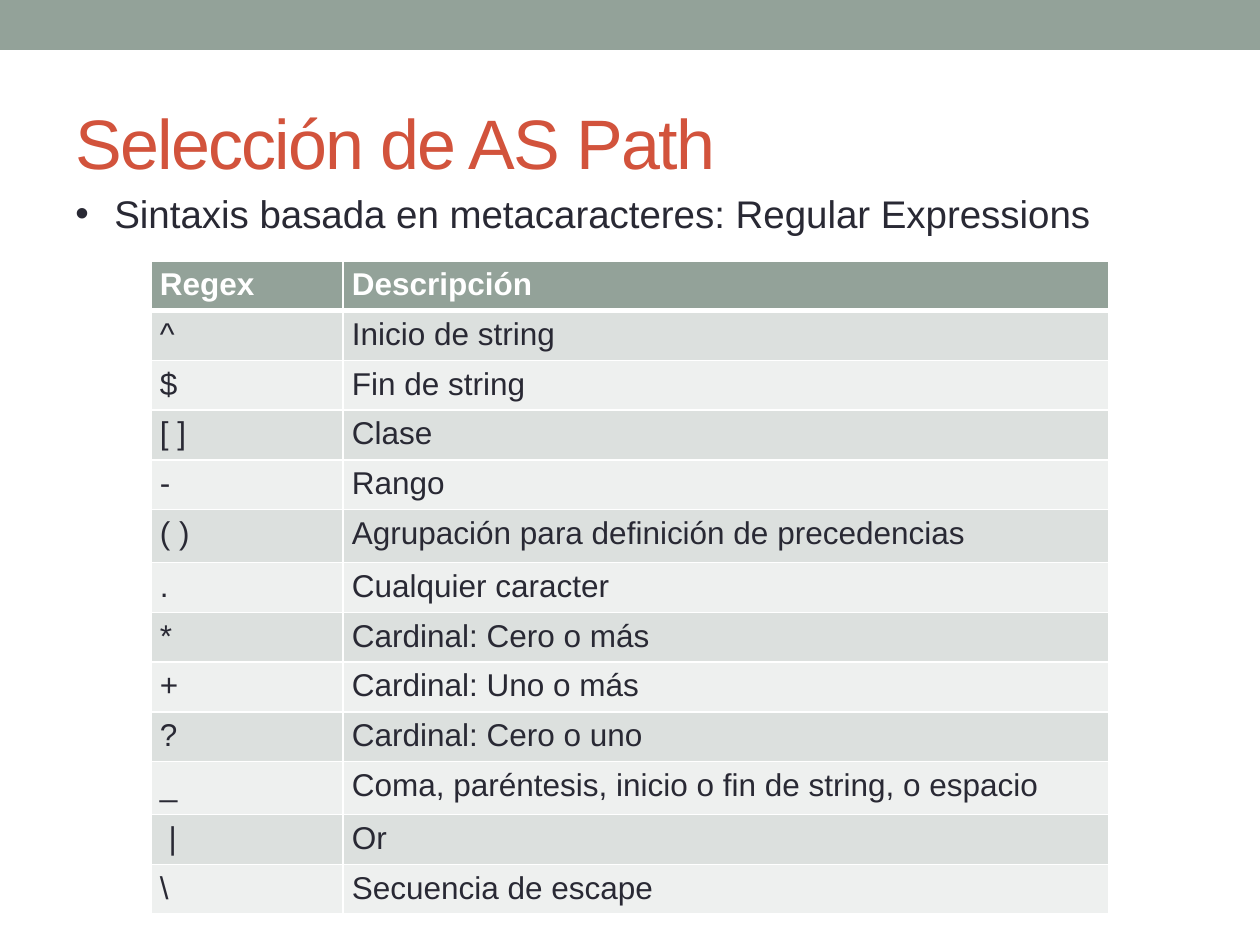
from lxml import etree
from pptx import Presentation
from pptx import util as u
from pptx.dml.color import RGBColor
from pptx.enum import shapes, text
from pptx.oxml.ns import qn

PX = u.Inches(1) // 126
FONT = "Arial"
SAGE, RUST, INK, WHITE = "93A299", "D2533C", "292934", "FFFFFF"
BANDS = ("DCE0DE", "EEF0EF")
COLUMNS = (192, 766)
ROW, TALL_ROW = 42, 53
TALL_ROWS = ("( )", "_")
REGEX_ROWS = (
    ("Regex", "Descripción"),
    ("^", "Inicio de string"),
    ("$", "Fin de string"),
    ("[ ]", "Clase"),
    ("-", "Rango"),
    ("( )", "Agrupación para definición de precedencias"),
    (".", "Cualquier caracter"),
    ("*", "Cardinal: Cero o más"),
    ("+", "Cardinal: Uno o más"),
    ("?", "Cardinal: Cero o uno"),
    ("_", "Coma, paréntesis, inicio o fin de string, o espacio"),
    (" |", "Or"),
    ("\\", "Secuencia de escape"),
)


def px(n):
    return u.Emu(n * PX)


def color(value):
    return RGBColor.from_string(value)


def fill(target, value):
    target.fill.solid()
    target.fill.fore_color.rgb = color(value)


def format_run(p, size, value, bold=False):
    r = p.runs[0]
    r.font.name, r.font.size, r.font.bold = FONT, u.Pt(size), bold
    r.font.color.rgb = color(value)
    return r


def add_band(s, x, y, w, h):
    sp = s.shapes.add_shape(shapes.MSO_SHAPE.RECTANGLE, px(x), px(y), px(w), px(h))
    sp.shadow.inherit = False
    fill(sp, SAGE)
    sp.line.fill.background()


def add_text(s, x, y, w, h, content, size, value, anchor=text.MSO_ANCHOR.TOP):
    tf = s.shapes.add_textbox(px(x), px(y), px(w), px(h)).text_frame
    tf.word_wrap = True
    tf.vertical_anchor = anchor
    p = tf.paragraphs[0]
    p.text = content
    return p, format_run(p, size, value)


def add_bullet(p, indent):
    pPr = p._p.get_or_add_pPr()
    pPr.set("marL", str(px(indent)))
    pPr.set("indent", str(px(-indent)))
    etree.SubElement(pPr, qn("a:buFont")).set("typeface", FONT)
    etree.SubElement(pPr, qn("a:buChar")).set("char", "•")


def set_borders(cell, bottom):
    """White borders, 1 pt except for the given bottom width."""
    tcPr = cell._tc.get_or_add_tcPr()
    for side, width in (("L", 1), ("R", 1), ("T", 1), ("B", bottom)):
        ln = etree.SubElement(tcPr, qn(f"a:ln{side}"), w=str(u.Pt(width)))
        solid = etree.SubElement(ln, qn("a:solidFill"))
        etree.SubElement(solid, qn("a:srgbClr"), val=WHITE)


def format_cell(cell, content, row):
    header = row == 0
    cell.margin_left = cell.margin_right = px(9)
    cell.margin_top = cell.margin_bottom = px(6)
    # The header's lower rule is shared with the row under it.
    set_borders(cell, 3 if header else 1)
    fill(cell, SAGE if header else BANDS[(row - 1) % 2])
    p = cell.text_frame.paragraphs[0]
    p.text = content
    format_run(p, 18, WHITE if header else INK, header)


def add_regex_table(s, x, y):
    heights = [TALL_ROW if r[0] in TALL_ROWS else ROW for r in REGEX_ROWS]
    table = s.shapes.add_table(len(heights), len(COLUMNS), px(x), px(y),
                               px(sum(COLUMNS)), px(sum(heights))).table
    for column, width in zip(table.columns, COLUMNS):
        column.width = px(width)
    for i, (height, row) in enumerate(zip(heights, REGEX_ROWS)):
        table.rows[i].height = px(height)
        for j, content in enumerate(row):
            format_cell(table.cell(i, j), content, i)


def main():
    prs = Presentation()
    prs.slide_width, prs.slide_height = px(1260), px(945)
    s = prs.slides.add_slide(prs.slide_layouts[6])
    add_band(s, 0, 0, 1260, 50)
    _, r = add_text(s, 63, 73, 1134, 136, "Selección de AS Path", 40, RUST,
                    text.MSO_ANCHOR.MIDDLE)
    r._r.get_or_add_rPr().set("spc", "-100")
    p, _ = add_text(s, 63, 184, 1111, 59,
                    "Sintaxis basada en metacaracteres: Regular Expressions", 22, INK)
    add_bullet(p, 39)
    add_regex_table(s, 151, 261)
    prs.save("out.pptx")


if __name__ == "__main__":
    main()
